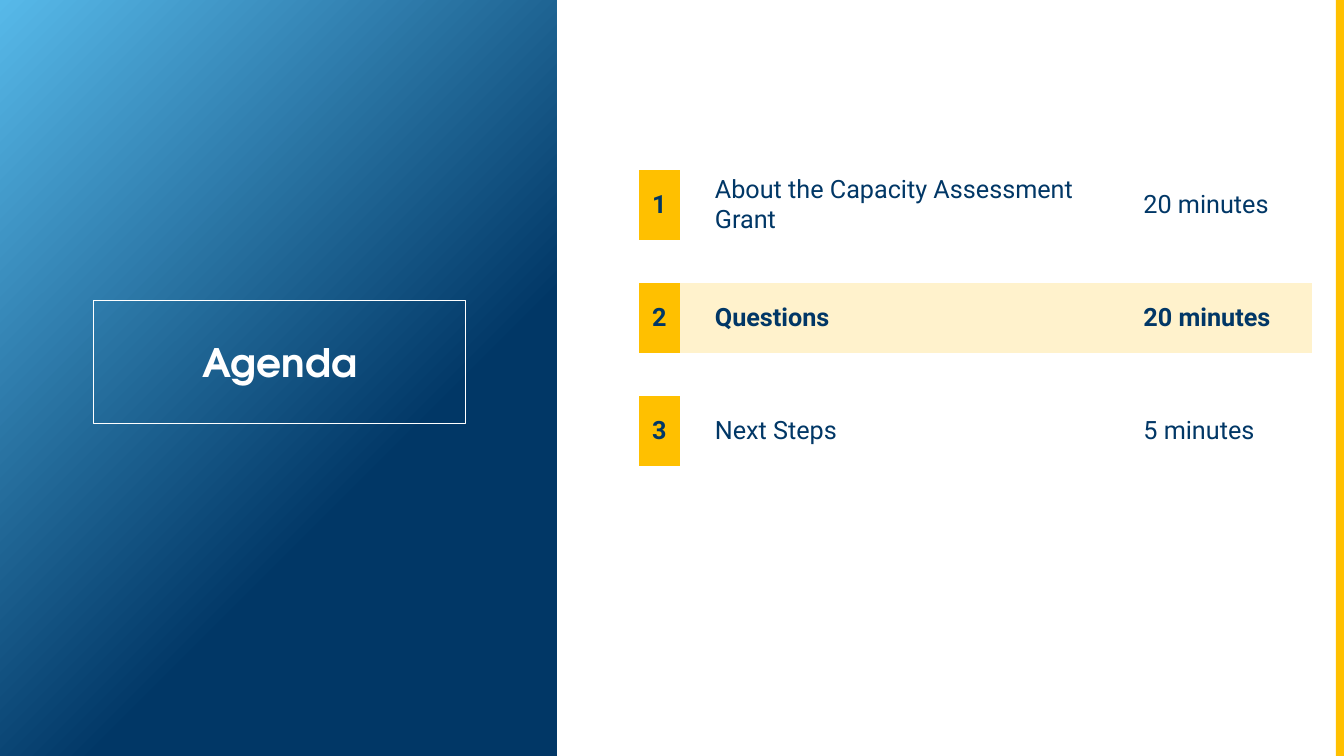
from dataclasses import dataclass

from pptx import Presentation
from pptx.dml.color import RGBColor as RGB
from pptx.enum.shapes import MSO_SHAPE as SHAPE
from pptx.enum.text import MSO_ANCHOR as ANCHOR, PP_ALIGN as ALIGN
from pptx.oxml.ns import qn
from pptx.util import Inches, Pt

NO_STYLE_NO_GRID = "{2D5ABB26-0587-4C30-8999-92F81FD0307C}"
AGENDA = [
    ("About the Capacity Assessment Grant", "20 minutes"),
    ("Questions", "20 minutes"),
    ("Next Steps", "5 minutes"),
]
CURRENT = 2


@dataclass(frozen=True)
class Theme:
    navy: RGB = RGB(0x01, 0x37, 0x66)
    sky: RGB = RGB(0x57, 0xB9, 0xE9)
    gold: RGB = RGB(0xFF, 0xC0, 0x00)
    cream: RGB = RGB(0xFF, 0xF2, 0xCC)
    white: RGB = RGB(0xFF, 0xFF, 0xFF)
    title_font: str = "TeX Gyre Adventor"
    body_font: str = "Roboto"
    title_size: int = 28
    body_size: int = 18


class AgendaSlide:
    def __init__(self, slide, theme):
        self.slide = slide
        self.theme = theme

    def rect(self, left, top, width, height):
        sp = self.slide.shapes.add_shape(
            SHAPE.RECTANGLE, *map(Inches, (left, top, width, height)))
        sp.shadow.inherit = False
        sp.fill.background()
        sp.line.fill.background()
        return sp

    def bar(self, left, top, width, height, color):
        sp = self.rect(left, top, width, height)
        sp.fill.solid()
        sp.fill.fore_color.rgb = color

    def gradient_panel(self, left, top, width, height):
        """Panel fading from sky at the top left to navy at the bottom right."""
        fill = self.rect(left, top, width, height).fill
        fill.gradient()
        fill.gradient_angle = 315
        stops = [(0, self.theme.sky), (0.65, self.theme.navy)]
        for stop, (position, color) in zip(fill.gradient_stops, stops):
            stop.position = position
            stop.color.rgb = color

    def title(self, text, left, top, width, height):
        t = self.theme
        sp = self.rect(left, top, width, height)
        sp.line.color.rgb = t.white
        sp.line.width = Pt(1)
        tf = sp.text_frame
        tf.text = text
        tf.vertical_anchor = ANCHOR.MIDDLE
        p = tf.paragraphs[0]
        p.alignment = ALIGN.CENTER
        self.style(p, t.title_font, t.title_size, t.white, True)

    def style(self, p, name, size, color, bold):
        font = p.font if not p.runs else p.runs[0].font
        font.name = name
        font.size = Pt(size)
        font.color.rgb = color
        font.bold = bold

    def cell(self, cell, text, bold=False):
        t = self.theme
        cell.text = text
        cell.vertical_anchor = ANCHOR.MIDDLE
        self.style(cell.text_frame.paragraphs[0], t.body_font, t.body_size,
                   t.navy, bold)

    def agenda(self, items, current, left, top, columns, item_height, gap):
        """Table with a spacer row after each item and one more at the end."""
        t = self.theme
        heights = [item_height, gap] * len(items) + [gap]
        frame = self.slide.shapes.add_table(
            len(heights), len(columns), Inches(left), Inches(top),
            Inches(sum(columns)), Inches(sum(heights)))
        for style_id in frame.element.iter(qn("a:tableStyleId")):
            style_id.text = NO_STYLE_NO_GRID
        table = frame.table
        table.first_row = table.horz_banding = False
        for column, width in zip(table.columns, columns):
            column.width = Inches(width)
        for row, height in zip(table.rows, heights):
            row.height = Inches(height)
        for cell in table.iter_cells():
            cell.fill.background()

        for number, (topic, duration) in enumerate(items, 1):
            cells = list(table.rows[2 * (number - 1)].cells)
            active = number == current
            if active:
                for cell in cells[1:]:
                    cell.fill.solid()
                    cell.fill.fore_color.rgb = t.cream
            badge = cells[0]
            badge.fill.solid()
            badge.fill.fore_color.rgb = t.gold
            self.cell(badge, str(number), True)
            badge.text_frame.paragraphs[0].alignment = ALIGN.CENTER
            self.cell(cells[2], topic, active)
            self.cell(cells[3], duration, active)


def main():
    prs = Presentation()
    prs.slide_width, prs.slide_height = Inches(13.33), Inches(7.5)
    theme = Theme()
    s = AgendaSlide(prs.slides.add_slide(prs.slide_layouts[6]), theme)
    s.gradient_panel(0, 0, 5.52, 7.5)
    s.bar(13.25, 0, 0.08, 7.5, theme.gold)
    s.agenda(AGENDA, CURRENT, 6.34, 1.69, [0.4, 0.25, 4.25, 1.77], 0.69, 0.43)
    s.title("Agenda", 0.93, 2.98, 3.69, 1.22)
    prs.save("out.pptx")


if __name__ == "__main__":
    main()
